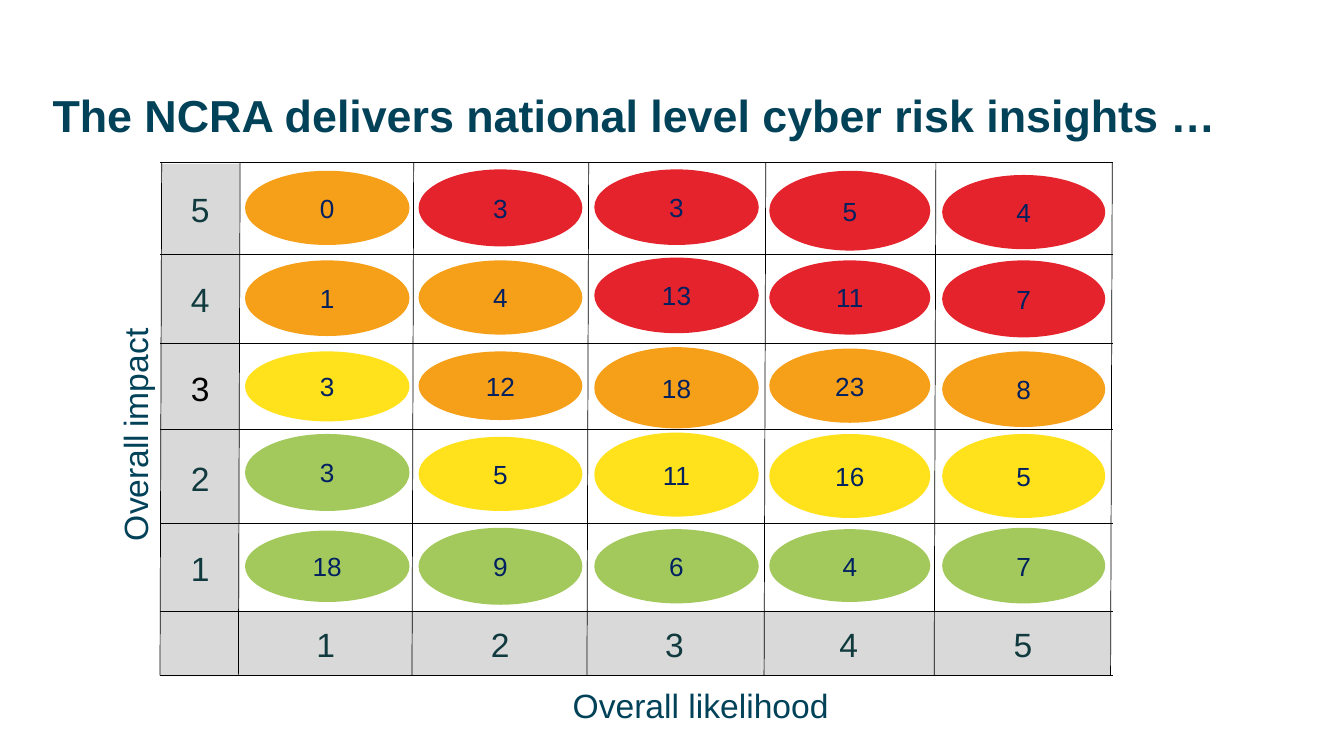
from lxml import etree
from pptx import Presentation
from pptx.dml.color import RGBColor
from pptx.enum.shapes import MSO_CONNECTOR, MSO_SHAPE
from pptx.enum.text import MSO_ANCHOR, MSO_AUTO_SIZE, PP_ALIGN
from pptx.oxml.ns import qn
from pptx.util import Pt

RECTANGLE, ELLIPSE = MSO_SHAPE.RECTANGLE, MSO_SHAPE.OVAL
STRAIGHT = MSO_CONNECTOR.STRAIGHT
MIDDLE, CENTER, LEFT = MSO_ANCHOR.MIDDLE, PP_ALIGN.CENTER, PP_ALIGN.LEFT
GROW = MSO_AUTO_SIZE.SHAPE_TO_FIT_TEXT

COLORS = {
    "navy": "024259", "label": "103A3E", "count": "002060", "black": "000000",
    "header": "D9D9D9", "red": "E5232C", "orange": "F69F19",
    "yellow": "FFE21B", "green": "A3C95C",
}

# Matrix edges; the vertical rules lean left by LEAN from top to bottom
COLUMN_EDGES = [115.5, 171.5, 295.5, 420.5, 547, 668.5, 794.5]
ROW_EDGES = [116, 181.5, 245, 307, 373.5, 437, 482.5]
LEAN = 1.2

# Left and width of the ellipses in each likelihood column
ELLIPSE_COLUMNS = [(175, 117.5), (299, 117), (424.5, 117.5), (549.5, 115), (673, 116.5)]

# Impact level: (risk count, colour, top, height) for likelihood 1 to 5
RISKS = {
    5: [(0, "orange", 122, 53), (3, "red", 121, 55), (3, "red", 121, 54),
        (5, "red", 122, 57), (4, "red", 125, 53)],
    4: [(1, "orange", 186, 54), (4, "orange", 186, 53), (13, "red", 184, 54),
        (11, "red", 186, 53), (7, "red", 186, 55)],
    3: [(3, "yellow", 251, 50), (12, "orange", 251, 49), (18, "orange", 248, 58),
        (23, "orange", 249, 53), (8, "orange", 251, 54)],
    2: [(3, "green", 310, 55), (5, "yellow", 312, 53), (11, "yellow", 309, 60),
        (16, "yellow", 310, 60), (5, "yellow", 310, 60)],
    1: [(18, "green", 379, 51), (9, "green", 377, 55), (6, "green", 378, 53),
        (4, "green", 378, 52), (7, "green", 377, 54)],
}


def set_font(font, size, color):
    font.name = "Arial"
    font.size = Pt(size)
    font.color.rgb = RGBColor.from_string(COLORS[color])


def add_cell(kind, left, top, width, height, fill, text, size, color):
    """Add a borderless filled shape with one centred line of text."""
    shape = page.shapes.add_shape(kind, Pt(left), Pt(top), Pt(width), Pt(height))
    shape.shadow.inherit = False
    shape.fill.solid()
    shape.fill.fore_color.rgb = RGBColor.from_string(COLORS[fill])
    shape.line.fill.background()
    shape.text_frame.vertical_anchor = MIDDLE
    para = shape.text_frame.paragraphs[0]
    para.text = text
    para.alignment = CENTER
    set_font(para.font, size, color)


deck = Presentation()
deck.slide_width, deck.slide_height = Pt(960), Pt(540)
page = deck.slides.add_slide(deck.slide_layouts[5])

# Title
title = page.shapes.title
title.left, title.top, title.width, title.height = Pt(37.5), Pt(60.5), Pt(859), Pt(47.5)
frame = title.text_frame
frame.margin_left = frame.margin_top = frame.margin_right = frame.margin_bottom = 0
frame.vertical_anchor = MIDDLE
para = frame.paragraphs[0]
para.text = "The NCRA delivers national level cyber risk insights …"
para.alignment = LEFT
para.line_spacing = 0.9
para.font.bold = True
set_font(para.font, 32, "navy")

# Scale headers
for index, level in enumerate(RISKS):
    color = "black" if level == 3 else "label"
    add_cell(RECTANGLE, 115, 117 + 64 * index, 56, 65, "header", str(level), 24, color)
for index in range(5):
    add_cell(RECTANGLE, 170.5 + 124.5 * index, 437, 124.5, 45.5,
             "header", str(index + 1), 24, "label")
add_cell(RECTANGLE, 114.5, 438, 57, 45, "header", "", 24, "label")

# Axis titles
for words, left, top, width, rotation in [
    (["Overall", " ", "impact"], 12.25, 291.5, 168, 270),
    (["Overall likelihood"], 402, 486, 199.5, 0),
]:
    box = page.shapes.add_textbox(Pt(left), Pt(top), Pt(width), Pt(36))
    box.rotation = rotation
    box.text_frame.word_wrap = False
    box.text_frame.auto_size = GROW
    for word in words:
        span = box.text_frame.paragraphs[0].add_run()
        span.text = word
        set_font(span.font, 18 if word == " " else 24, "navy")

# Risk counts
for risks in RISKS.values():
    for (left, width), (count, fill, top, height) in zip(ELLIPSE_COLUMNS, risks):
        add_cell(ELLIPSE, left, top, width, height, fill, str(count), 18.7, "count")

# Grid rules
rules = [(114.5, y, 795, y) for y in ROW_EDGES]
rules += [(x, ROW_EDGES[0], x - LEAN, ROW_EDGES[-1]) for x in COLUMN_EDGES]
for ends in rules:
    rule = page.shapes.add_connector(STRAIGHT, *[Pt(value) for value in ends])
    rule.line.width = Pt(0.5)
    rule.line.color.rgb = RGBColor.from_string(COLORS["black"])
    etree.SubElement(rule._element.spPr, qn("a:effectLst"))

deck.save("out.pptx")
